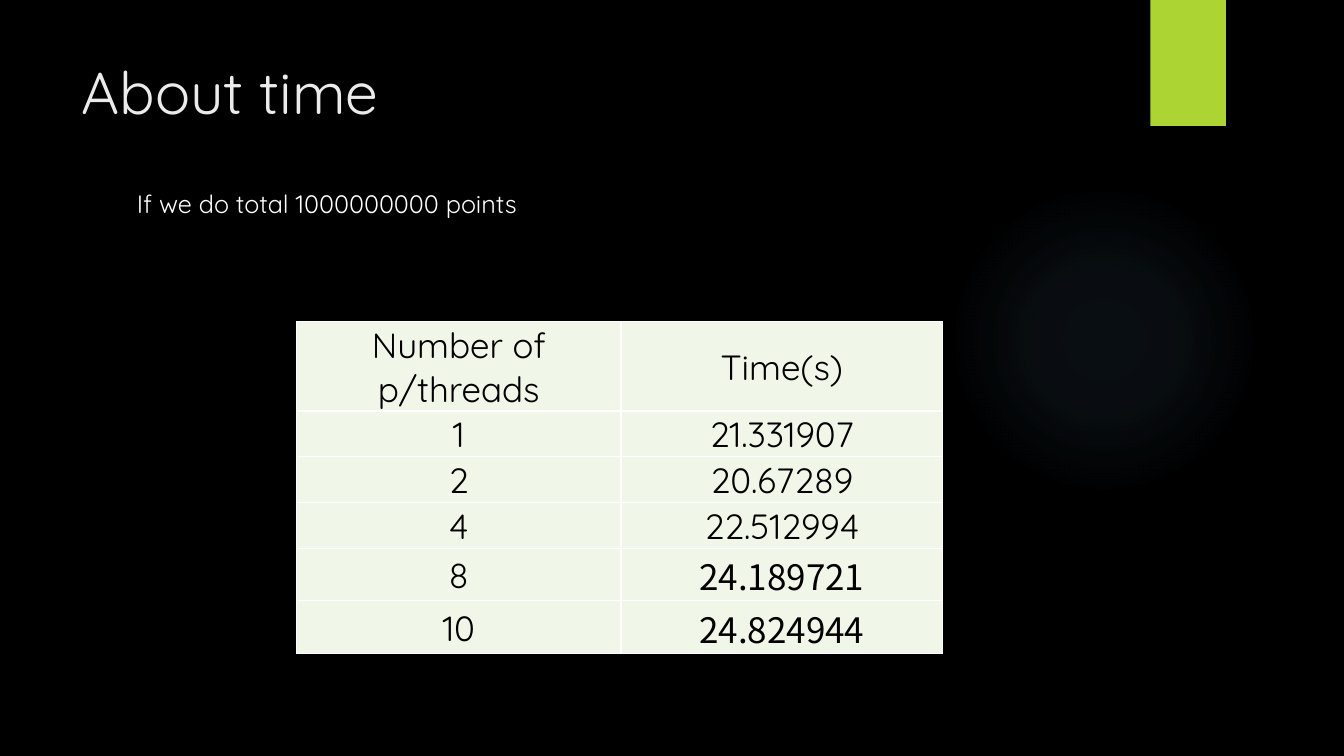
from pptx import Presentation
from pptx import util as u
from pptx.dml.color import RGBColor
from pptx.enum import shapes, text
from pptx.oxml import parse_xml
from pptx.oxml.ns import nsdecls

# Content
TITLE = "About time"
CAPTION = "If we do total 1000000000 points"
TIMINGS = [
    ("Number of p/threads", "Time(s)"),
    ("1", "21.331907"),
    ("2", "20.67289"),
    ("4", "22.512994"),
    ("8", "24.189721"),
    ("10", "24.824944"),
]
FALLBACK_FONT_VALUES = {"24.189721", "24.824944"}
COLUMN_WIDTHS = (3.22, 3.19)
ROW_HEIGHT = 0.45
GLOW_STOPS = [(0, 7), (36, 6), (69, 0)]  # position and opacity, percent


class Theme:
    background = "000000"
    title = "EBEBEB"
    caption = "FFFFFF"
    accent = "ACD433"
    glow = "7AC4F0"
    cell = "F1F7E8"
    cell_text = "000000"
    border = "FFFFFF"
    font = "Quicksand"
    fallback_font = "Noto Sans CJK SC"
    title_size, caption_size, cell_size = 42, 18, 25


def box(*lengths):
    return [u.Inches(length) for length in lengths]


def paint(fill, color):
    fill.solid()
    fill.fore_color.rgb = RGBColor.from_string(color)


def add_run(paragraph, words, size, color, font=Theme.font):
    run = paragraph.add_run()
    run.text = words
    run.font.name = font
    run.font.size = u.Pt(size)
    run.font.bold = False
    run.font.color.rgb = RGBColor.from_string(color)


def add_plain_shape(slide, kind, *place):
    shape = slide.shapes.add_shape(kind, *box(*place))
    shape.shadow.inherit = False
    shape.line.fill.background()
    return shape


def add_glow(slide):
    glow = add_plain_shape(slide, shapes.MSO_SHAPE.OVAL, 9.41, 1.83, 3.08, 3.08)
    stops = "".join(
        f'<a:gs pos="{position * 1000}"><a:srgbClr val="{Theme.glow}">'
        f'<a:alpha val="{opacity * 1000}"/></a:srgbClr></a:gs>'
        for position, opacity in GLOW_STOPS)
    gradient = parse_xml(
        f'<a:gradFill {nsdecls("a")} rotWithShape="1"><a:gsLst>{stops}</a:gsLst>'
        '<a:path path="circle"><a:fillToRect l="50000" t="50000" r="50000" b="50000"/>'
        '</a:path></a:gradFill>')
    glow._element.spPr.insert(2, gradient)


def add_borders(cell):
    properties = cell._tc.get_or_add_tcPr()
    for index, side in enumerate("LRTB"):
        properties.insert(index, parse_xml(
            f'<a:ln{side} {nsdecls("a")} w="{u.Pt(1)}"><a:solidFill>'
            f'<a:srgbClr val="{Theme.border}"/></a:solidFill></a:ln{side}>'))


def add_timings(slide):
    place = box(2.94, 3.19, sum(COLUMN_WIDTHS), ROW_HEIGHT * len(TIMINGS))
    table = slide.shapes.add_table(len(TIMINGS), len(COLUMN_WIDTHS), *place).table
    table.first_row = table.horz_banding = False
    for column, width in zip(table.columns, COLUMN_WIDTHS):
        column.width = u.Inches(width)
    for row, values in zip(table.rows, TIMINGS):
        row.height = u.Inches(ROW_HEIGHT)
        for cell, value in zip(row.cells, values):
            paint(cell.fill, Theme.cell)
            add_borders(cell)
            cell.vertical_anchor = text.MSO_ANCHOR.MIDDLE
            cell.margin_left = cell.margin_right = cell.margin_top = u.Inches(0.02)
            cell.margin_bottom = 0
            paragraph = cell.text_frame.paragraphs[0]
            paragraph.alignment = text.PP_ALIGN.CENTER
            font = Theme.fallback_font if value in FALLBACK_FONT_VALUES else Theme.font
            add_run(paragraph, value, Theme.cell_size, Theme.cell_text, font)


def main():
    presentation = Presentation()
    presentation.slide_width, presentation.slide_height = box(13.33, 7.5)
    slide = presentation.slides.add_slide(presentation.slide_layouts[5])

    # Backdrop
    paint(slide.background.fill, Theme.background)
    add_glow(slide)
    tab = add_plain_shape(slide, shapes.MSO_SHAPE.RECTANGLE, 11.41, 0, 0.75, 1.25)
    paint(tab.fill, Theme.accent)

    # Title
    title = slide.shapes.title
    title.left, title.top, title.width, title.height = box(0.71, 0.5, 10.29, 1.53)
    frame = title.text_frame
    frame.auto_size = text.MSO_AUTO_SIZE.NONE
    frame.vertical_anchor = text.MSO_ANCHOR.TOP
    frame.paragraphs[0].alignment = text.PP_ALIGN.LEFT
    add_run(frame.paragraphs[0], TITLE, Theme.title_size, Theme.title)

    # Timings and caption
    add_timings(slide)
    caption = slide.shapes.add_textbox(*box(1.26, 1.82, 4.09, 0.4)).text_frame
    caption.word_wrap = False
    caption.auto_size = text.MSO_AUTO_SIZE.SHAPE_TO_FIT_TEXT
    add_run(caption.paragraphs[0], CAPTION, Theme.caption_size, Theme.caption)

    presentation.save("out.pptx")


if __name__ == "__main__":
    main()
